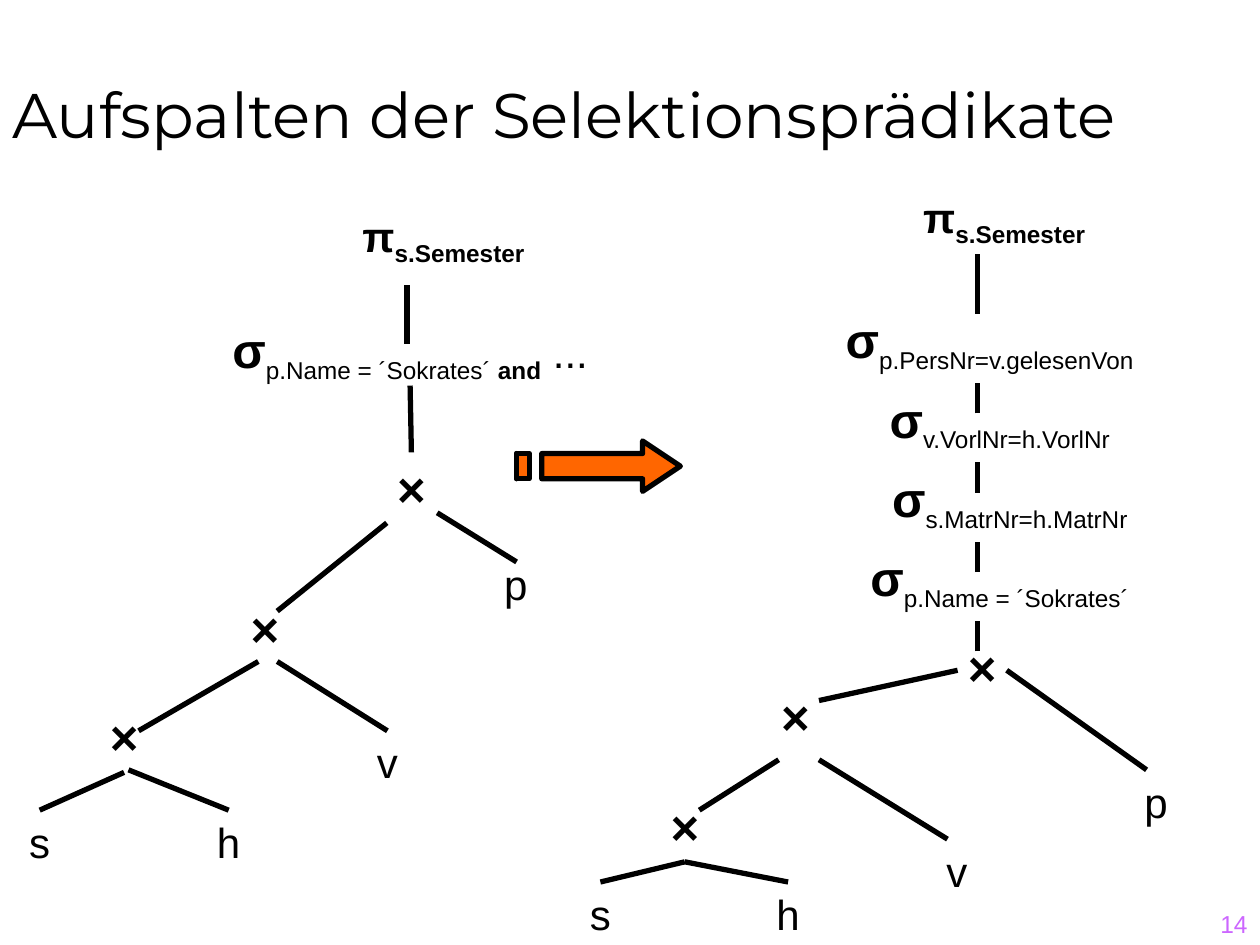
"""Build a slide showing how selection predicates are split in two query trees."""
import pptx
import pptx.dml.color
import pptx.enum.shapes
import pptx.enum.text
import pptx.oxml
import pptx.oxml.ns
import pptx.util

presentation = pptx.Presentation()
presentation.slide_width = pptx.util.Inches(10)
presentation.slide_height = pptx.util.Inches(7.5)
slide = presentation.slides.add_slide(presentation.slide_layouts[6])
column = presentation.slide_width / 100
row = presentation.slide_height / 75
align = pptx.enum.text.PP_ALIGN
anchor = pptx.enum.text.MSO_ANCHOR


def color(value):
    return pptx.dml.color.RGBColor.from_string(value)


def add_text(box, runs, alignment=align.CENTER, anchoring=anchor.TOP, font="Arial", ink="000000"):
    left, top, width, height = box
    shape = slide.shapes.add_textbox(
        round(left * column), round(top * row), round(width * column), round(height * row))
    frame = shape.text_frame
    frame.word_wrap = True
    frame.vertical_anchor = anchoring
    paragraph = frame.paragraphs[0]
    paragraph.alignment = alignment
    for text, size, bold, lowered in runs:
        run = paragraph.add_run()
        run.text = text
        run.font.name = font
        run.font.size = pptx.util.Pt(size)
        run.font.bold = bold
        run.font.color.rgb = color(ink)
        if lowered:
            run.font._element.set("baseline", "-25000")
    return shape


add_text((79.2, 70, 20.8, 5), [("14", 14, False, False)], align.RIGHT, anchor.BOTTOM, ink="CC66FF")
add_text((0, 0, 100, 12.5), [("Aufspalten der Selektionsprädikate", 36, False, False)],
         align.LEFT, anchor.BOTTOM, "Montserrat")

nodes = {}
for tree, letter, left, top in [
    ("left", "s", 0, 64.3), ("left", "h", 15, 64.3), ("left", "v", 27.6, 58), ("left", "p", 37.8, 43.8),
    ("right", "s", 44.5, 70), ("right", "h", 59.4, 70), ("right", "v", 72.8, 66.6), ("right", "p", 88.6, 61.1),
]:
    nodes[tree, letter] = add_text((left, top, 6.3, 5), [(letter, 24, False, False)])

for tree, level, left, top, width in [
    ("left", "low", 7.1, 55.6, 5.5), ("left", "middle", 18.9, 47, 3.9), ("left", "high", 29.9, 35.9, 5.5),
    ("right", "low", 51.6, 62.7, 5.5), ("right", "middle", 61, 54, 3.9), ("right", "high", 75.2, 50.1, 5.5),
]:
    nodes[tree, level] = add_text((left, top, width, 5.7), [("×", 28, True, False)])

for left, top in [(22.8, 16.2), (67.3, 14.7)]:
    add_text((left, top, 24.8, 5), [("π", 24, True, False), ("s.Semester", 24, True, True)])

conjunction = [("and", 24, True, True), (" ...", 24, False, False)]
for name, left, top, predicate, rest in [
    ("all", 15.8, 24.9, "p.Name = ´Sokrates´ ", conjunction),
    ("teacher", 61.8, 24.1, "p.PersNr=v.gelesenVon", []),
    ("lecture", 62.6, 30.4, "v.VorlNr=h.VorlNr", []),
    ("student", 63.4, 36.7, "s.MatrNr=h.MatrNr", []),
    ("professor", 62.6, 43, "p.Name = ´Sokrates´", []),
]:
    nodes["selection", name] = add_text(
        (left, top, 33.5, 5.7), [("σ", 28, True, False), (predicate, 24, False, True)] + rest)

top_side, bottom_side = 0, 2
edges = [
    (3.2, 64.3, 9.9, 61.3, ("left", "s"), ("left", "low")),
    (18.1, 64.3, 10.2, 61.1, ("left", "h"), None),
    (11, 58, 20.5, 52.5, None, None),
    (30.7, 58, 22, 52.5, ("left", "v"), None),
    (22, 48.5, 30.7, 41.5, None, None),
    (41, 44.6, 34.7, 40.7, None, None),
    (32.7, 35.9, 32.5, 30.6, ("left", "high"), ("selection", "all")),
    (32.3, 27.3, 32.3, 22.6, None, None),
    (47.6, 70, 54.3, 68.4, ("right", "s"), ("right", "low")),
    (62.6, 70, 54.3, 68.4, ("right", "h"), ("right", "low")),
    (75.2, 66.6, 65, 60.3, None, None),
    (91, 61.1, 79.9, 53.2, None, None),
    (55.5, 64.3, 61.8, 60.3, None, None),
    (65, 55.6, 76, 53.2, None, None),
    (77.6, 24.9, 77.6, 20.2, None, None),
]
edges += [(77.6, 32.8 + 6.3 * step, 77.6, 30.4 + 6.3 * step, None, None) for step in range(4)]
for start_x, start_y, end_x, end_y, child, parent in edges:
    connector = slide.shapes.add_connector(
        pptx.enum.shapes.MSO_CONNECTOR.STRAIGHT,
        round(start_x * column), round(start_y * row), round(end_x * column), round(end_y * row))
    if child:
        connector.begin_connect(nodes[child], top_side)
    if parent:
        connector.end_connect(nodes[parent], bottom_side)
    connector.line.color.rgb = color("000000")
    connector.line.width = pptx.util.Pt(3)
    connector._element.spPr.append(pptx.oxml.parse_xml(
        f"<a:effectLst {pptx.oxml.ns.nsdecls('a')}/>"))

head = [(50.9, 35.1), (50.9, 36.1), (42.7, 36.1), (42.7, 38.1), (50.9, 38.1), (50.9, 39.1), (54.3, 37.1)]
stripes = [[(left, 36.1), (left, 38.1), (right, 38.1), (right, 36.1)]
           for left, right in [(41.4, 42.3), (40.6, 41)]]
builder = slide.shapes.build_freeform(*head[0], scale=(column, row))
builder.add_line_segments(head[1:], close=True)
for stripe in stripes:
    builder.move_to(*stripe[0])
    builder.add_line_segments(stripe[1:], close=True)
arrow = builder.convert_to_shape()
arrow.shadow.inherit = False
arrow.fill.solid()
arrow.fill.fore_color.rgb = color("FF6600")
arrow.line.color.rgb = color("000000")
arrow.line.width = pptx.util.Pt(3)

presentation.save("out.pptx")
